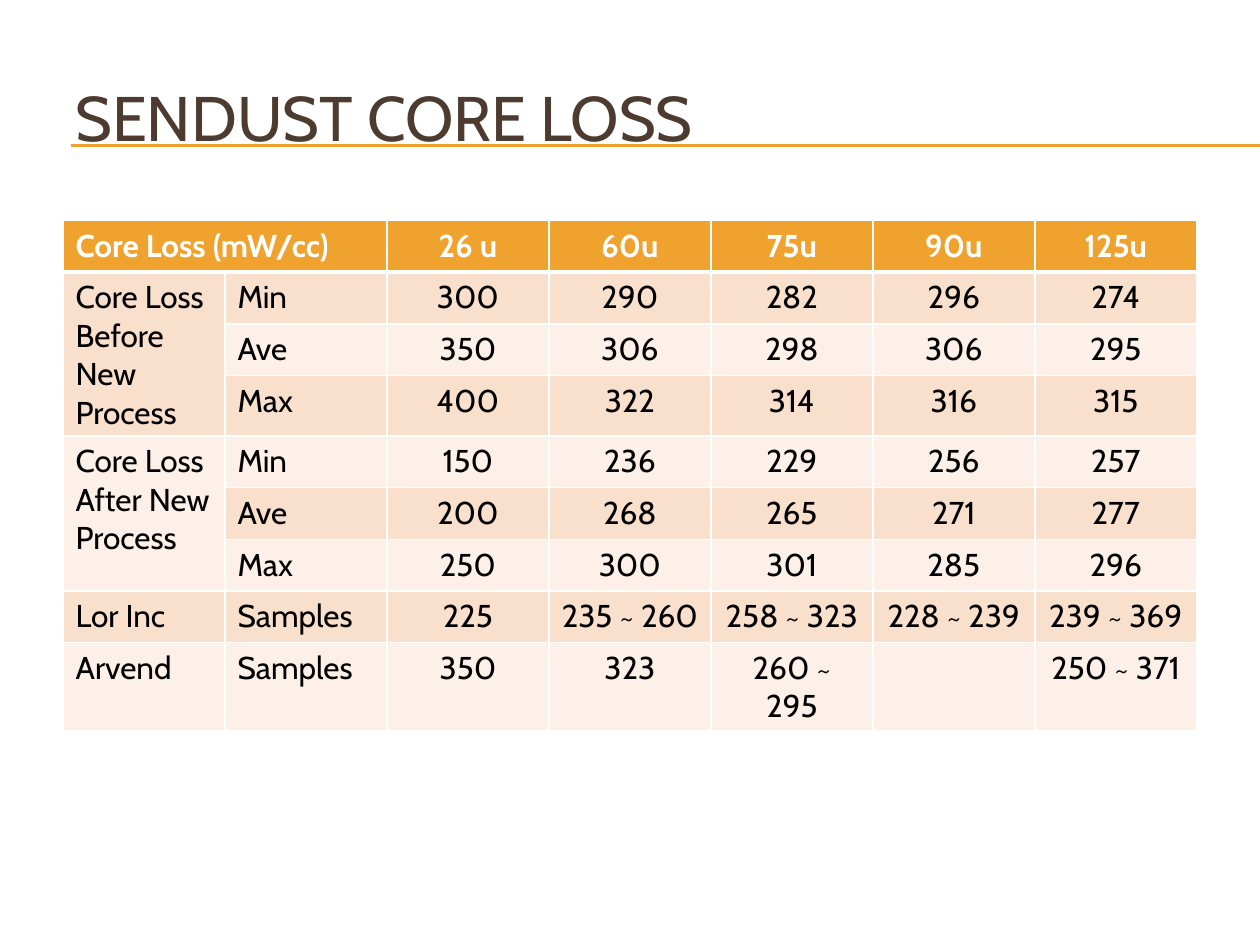
from lxml import etree
from pptx import Presentation
from pptx import util as u
from pptx.dml.color import RGBColor
from pptx.enum import shapes, text
from pptx.oxml.ns import qn

# Content
TITLE = "SENDUST CORE LOSS"
ROWS = [
    ("Core Loss (mW/cc)", "", "26 u", "60u", "75u", "90u", "125u"),
    ("Core Loss Before New Process", "Min", "300", "290", "282", "296", "274"),
    ("", "Ave", "350", "306", "298", "306", "295"),
    ("", "Max", "400", "322", "314", "316", "315"),
    ("Core Loss After New Process", "Min", "150", "236", "229", "256", "257"),
    ("", "Ave", "200", "268", "265", "271", "277"),
    ("", "Max", "250", "300", "301", "285", "296"),
    ("Lor Inc", "Samples", "225", "235 ~ 260", "258 ~ 323", "228 ~ 239", "239 ~ 369"),
    ("Arvend", "Samples", "350", "323", "260 ~ 295", "", "250 ~ 371"),
]
MERGES = [((0, 0), (0, 1)), ((1, 0), (3, 0)), ((4, 0), (6, 0))]

# Format
GOLD, WHITE, BROWN, BLACK = "F0A22E", "FFFFFF", "4E3B30", "000000"
BANDS = ["FCF0E8", "F9E0CD"]
HEAD = {"name": "Cabin", "size": u.Pt(18), "bold": True}
BODY = {"name": "Cabin", "size": u.Pt(18), "bold": False}
BIG = {"name": "Cabin", "size": u.Pt(36), "bold": False}
LEFT, TOP, WIDTH, ROW_H = 0.5, 1.75, 9, 0.41


def color(code):
    return RGBColor.from_string(code)


def write(par, words, form, code):
    run = par.add_run()
    run.text = words
    for key, val in form.items():
        setattr(run.font, key, val)
    run.font.color.rgb = color(code)


def edge(cell, side, width):
    props = cell._tc.get_or_add_tcPr()
    line = etree.SubElement(props, qn("a:ln" + side), w=str(u.Pt(width)))
    fill = etree.SubElement(line, qn("a:solidFill"))
    etree.SubElement(fill, qn("a:srgbClr"), val=WHITE)


prs = Presentation()
prs.slide_width, prs.slide_height = u.Inches(10), u.Inches(7.5)
slide = prs.slides.add_slide(prs.slide_layouts[6])

# Double rule under the title
for y in (1.15, 1.16):
    rule = slide.shapes.add_connector(
        shapes.MSO_CONNECTOR.STRAIGHT,
        u.Inches(0.56), u.Inches(y), u.Inches(10), u.Inches(y))
    rule.line.color.rgb = color(GOLD)
    rule.line.width = u.Pt(0.75)
    etree.SubElement(rule._element.spPr, qn("a:effectLst"))

# Title
box = slide.shapes.add_textbox(
    u.Inches(LEFT), u.Inches(0.3), u.Inches(WIDTH), u.Inches(1.25))
frame = box.text_frame
frame.word_wrap = True
frame.vertical_anchor = text.MSO_ANCHOR.MIDDLE
write(frame.paragraphs[0], TITLE, BIG, BROWN)

# Table
count = len(ROWS[0])
table = slide.shapes.add_table(
    len(ROWS), count, u.Inches(LEFT), u.Inches(TOP),
    u.Inches(WIDTH), u.Inches(ROW_H * len(ROWS))).table
for col in table.columns:
    col.width = u.Inches(WIDTH / count)
for row in table.rows:
    row.height = u.Inches(ROW_H)

for r, row in enumerate(ROWS):
    for c, words in enumerate(row):
        cell = table.cell(r, c)
        # A thick edge parts the header from the body
        thick = {0: "B", 1: "T"}.get(r)
        for side in "LRTB":
            edge(cell, side, 3 if side == thick else 1)
        cell.fill.solid()
        cell.fill.fore_color.rgb = color(BANDS[r % 2] if r else GOLD)
        par = cell.text_frame.paragraphs[0]
        if c > 1:
            par.alignment = text.PP_ALIGN.CENTER
        if words:
            write(par, words, BODY if r else HEAD, BLACK if r else WHITE)

for first, last in MERGES:
    table.cell(*first).merge(table.cell(*last))

prs.save("out.pptx")
